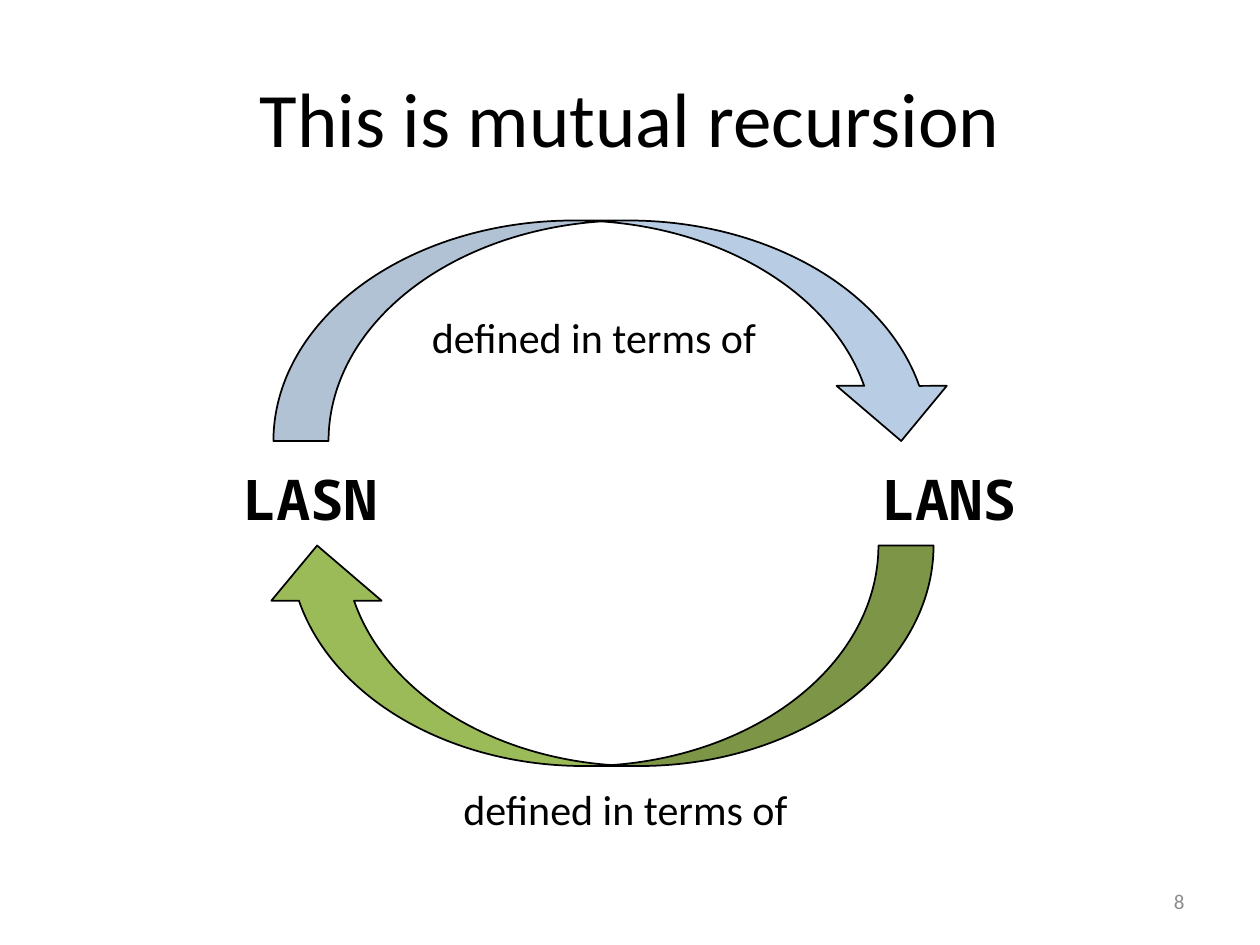
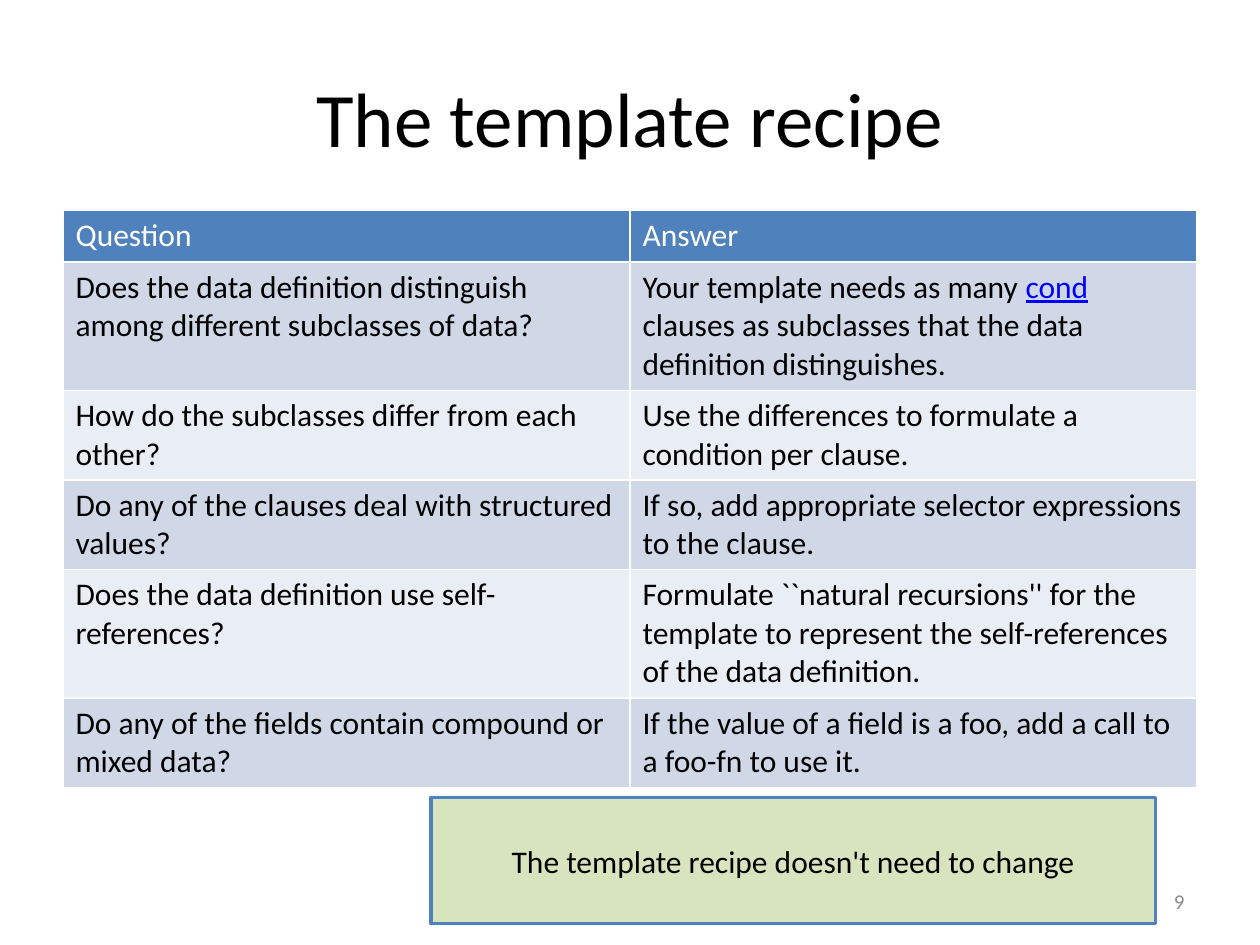
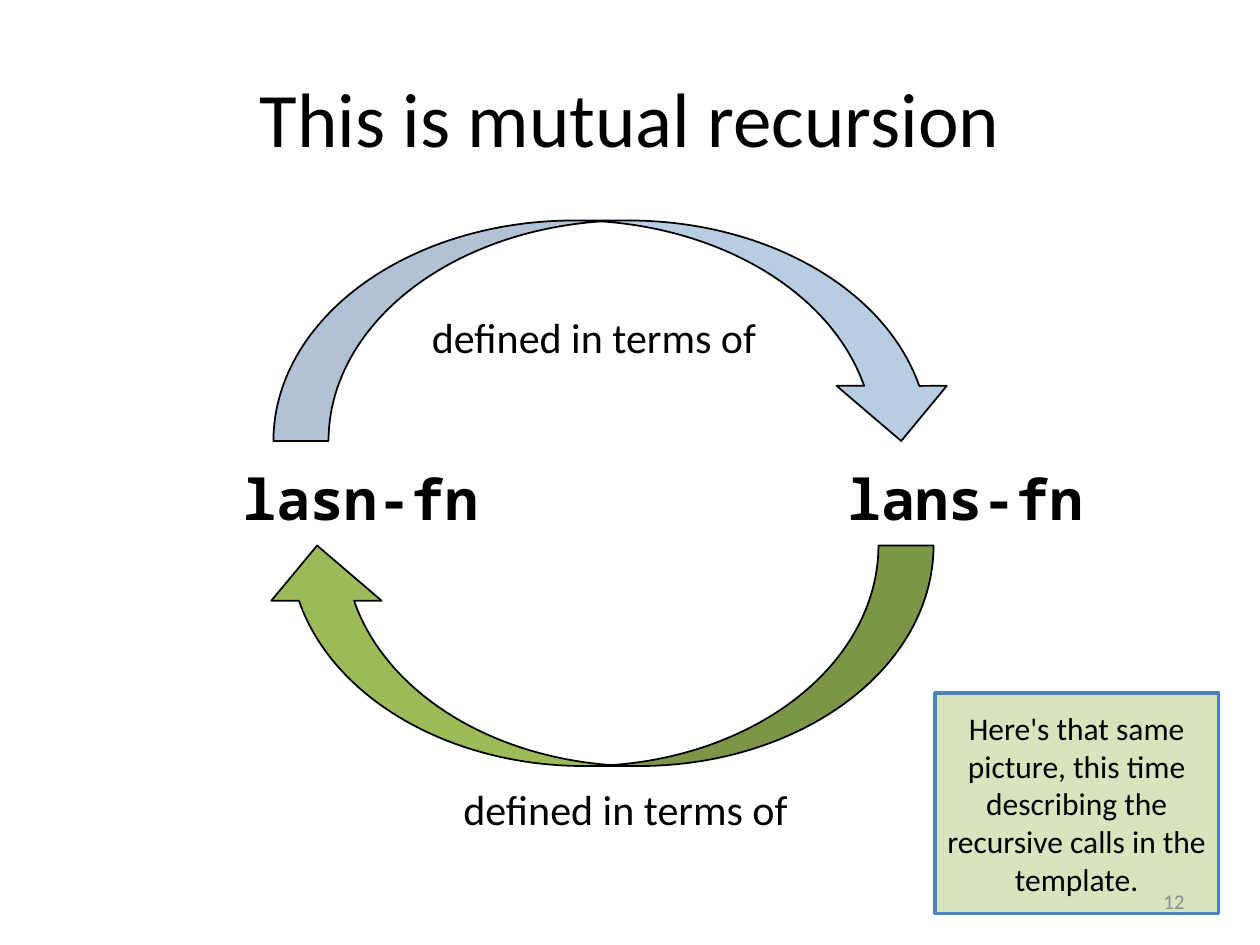
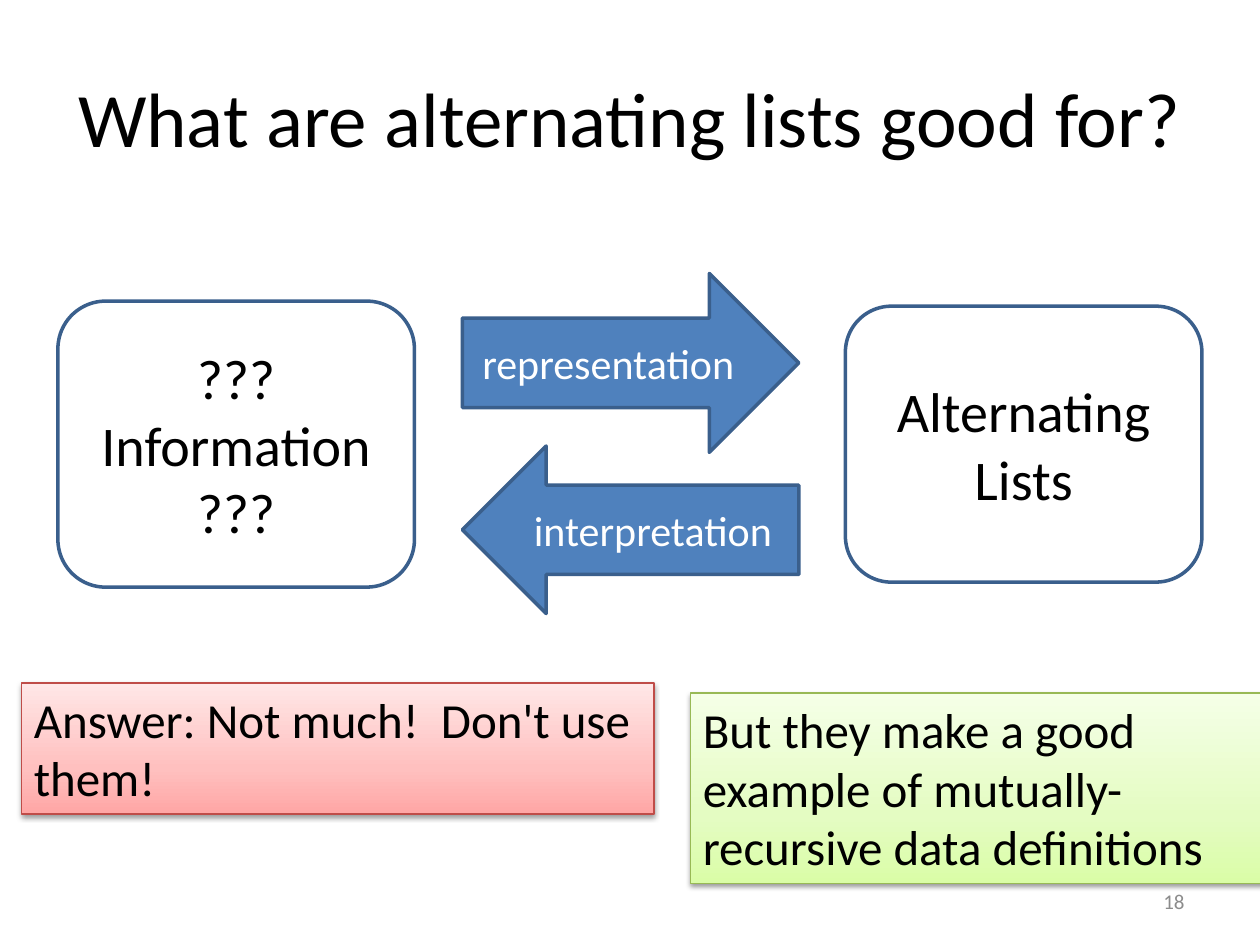
from copy import deepcopy

from lxml import etree
from pptx import Presentation
from pptx import util as u
from pptx.dml.color import RGBColor
from pptx.enum import shapes, text
from pptx.oxml.ns import qn

C = {
    "black": "000000", "white": "FFFFFF", "grey": "8C8C8C", "link": "0000FF",
    "blue": "4F81BD", "navy": "3A5F8C", "green": "9BBB59", "note": "D7E4BD",
    "band_dark": "D0D8E8", "band_light": "E9EDF4",
    "red_line": "BF4C48", "lime_line": "98B955",
}
REDS = [(0, "FFA6A5"), (0.35, "FFC0BF"), (1, "FFE7E7")]
LIMES = [(0, "DAFDA7"), (0.35, "E4FCC2"), (1, "F5FFE7")]

BODY = {"name": "Calibri", "size": u.Pt(18), "bold": False}
TITLE = {**BODY, "size": u.Pt(44)}
NUMBER = {**BODY, "size": u.Pt(12)}
LABEL = {**BODY, "size": u.Pt(24)}
ANSWER = {**BODY, "size": u.Pt(28)}
BOX = {**BODY, "size": u.Pt(32)}
CODE = {"name": "Noto Sans Mono", "size": u.Pt(32), "bold": True}
LINK = {**BODY, "underline": True}

MSO = shapes.MSO_SHAPE
AL = text.PP_ALIGN
MIDDLE = {"vertical_anchor": text.MSO_ANCHOR.MIDDLE, "word_wrap": True}
TOP = {"vertical_anchor": text.MSO_ANCHOR.TOP, "word_wrap": True}
GROW = {**TOP, "auto_size": text.MSO_AUTO_SIZE.SHAPE_TO_FIT_TEXT}

TITLE_BOX = (0.5, 0.3, 9, 1.25)
NUMBER_BOX = (7.17, 6.95, 2.33, 0.4)

RECIPE = [
    ("Question", "Answer", 0.41),
    ("Does the data definition distinguish among different subclasses of data?",
     "Your template needs as many |cond| clauses as subclasses that the data "
     "definition distinguishes.", 1.02),
    ("How do the subclasses differ from each other?",
     "Use the differences to formulate a condition per clause.", 0.71),
    ("Do any of the clauses deal with structured values?",
     "If so, add appropriate selector expressions to the clause.", 0.71),
    ("Does the data definition use self-references?",
     "Formulate ``natural recursions'' for the template to represent the "
     "self-references of the data definition.", 1.02),
    ("Do any of the fields contain compound or mixed data?",
     "If the value of a field is a foo, add a call to a foo-fn to use it.", 0.71),
]


def rgb(name):
    return RGBColor.from_string(C[name])


def inches(box):
    return [u.Inches(v) for v in box]


def set_all(obj, fmt):
    for key, value in fmt.items():
        setattr(obj, key, value)


def add_run(p, words, font, color):
    r = p.add_run()
    r.text = words
    set_all(r.font, font)
    r.font.color.rgb = rgb(color)


def write(sp, words, font, color="black", align=AL.LEFT, frame=MIDDLE):
    tf = sp.text_frame
    set_all(tf, frame)
    for i, line in enumerate(words.split("\n")):
        p = tf.add_paragraph() if i else tf.paragraphs[0]
        p.alignment = align
        add_run(p, line, font, color)


def add_text(s, box, words, font, **kw):
    write(s.shapes.add_textbox(*inches(box)), words, font, **kw)


def add_shape(s, kind, box, fill=None, line="navy", width=2):
    sp = s.shapes.add_shape(kind, *inches(box))
    sp.shadow.inherit = False
    if fill:
        sp.fill.solid()
        sp.fill.fore_color.rgb = rgb(fill)
    else:
        sp.fill.background()
    sp.line.color.rgb = rgb(line)
    sp.line.width = u.Pt(width)
    return sp


def add_note(s, box, words):
    sp = add_shape(s, MSO.RECTANGLE, box, "note", "blue")
    write(sp, words, BODY, align=AL.CENTER)


def add_slide(prs, title, number):
    s = prs.slides.add_slide(prs.slide_layouts[6])
    add_text(s, TITLE_BOX, title, TITLE, align=AL.CENTER)
    add_text(s, NUMBER_BOX, str(number), NUMBER, color="grey", align=AL.RIGHT)
    return s


def add_cycle(s, box, left_name, right_name, right_x):
    x, y, w, h = box
    arrow_h = 1.75
    over = add_shape(s, MSO.CURVED_DOWN_ARROW, (x + 0.09, y, 5.42, arrow_h),
                     "blue", "black", 1)
    color = over.fill._xPr.find(qn("a:solidFill"))[0]
    etree.SubElement(color, qn("a:alpha"), val="40000")
    under = add_shape(s, MSO.CURVED_DOWN_ARROW,
                      (x, y + h - arrow_h, 5.33, arrow_h), "green", "black", 1)
    for flip in ("flipH", "flipV"):
        under._element.spPr.xfrm.set(flip, "1")
    for dx, dy in ((1.25, 0.67), (1.5, 4.42)):
        add_text(s, (x + dx, y + dy, 3, 0.5), "defined in terms of", LABEL, frame=GROW)
    for name, name_x in ((left_name, x - 0.25), (right_name, right_x)):
        add_text(s, (name_x, y + 1.9, 2.2, 0.6), name, CODE)


def add_recipe(s, box):
    table = s.shapes.add_table(len(RECIPE), 2, *inches(box)).table
    for i, (question, answer, height) in enumerate(RECIPE):
        table.rows[i].height = u.Inches(height)
        band = "band_dark" if i % 2 else "band_light"
        for cell, words in zip(table.rows[i].cells, (question, answer)):
            cell.fill.solid()
            cell.fill.fore_color.rgb = rgb(band if i else "blue")
            p = cell.text_frame.paragraphs[0]
            for j, part in enumerate(words.split("|")):
                if j % 2:
                    add_run(p, part, LINK, "link")
                else:
                    add_run(p, part, BODY, "black" if i else "white")


def add_exchange(s, box):
    x, y, w, h = box
    box_w, arrow_x = 2.83, x + 3.21
    parts = [
        (MSO.ROUNDED_RECTANGLE, (x, y + 0.22, box_w, 2.27), None,
         "???\nInformation\n???", BOX, "black"),
        (MSO.ROUNDED_RECTANGLE, (x + w - box_w, y + 0.26, box_w, 2.19), None,
         "Alternating Lists", BOX, "black"),
        (MSO.RIGHT_ARROW, (arrow_x, y, 2.67, 1.42), "blue",
         "representation", LABEL, "white"),
        (MSO.LEFT_ARROW, (arrow_x, y + h - 1.33, 2.67, 1.33), "blue",
         "interpretation", LABEL, "white"),
    ]
    for kind, place, fill, words, font, color in parts:
        sp = add_shape(s, kind, place, fill)
        write(sp, words, font, color, AL.CENTER)
    sp.adjustments[0] = 0.533


def add_answer(s, box, words, stops, line):
    sp = add_shape(s, MSO.RECTANGLE, box, line=line, width=0.75)
    sp.fill.gradient()
    sp.fill.gradient_angle = 90
    first = sp.fill._xPr.find(qn("a:gradFill")).find(qn("a:gsLst"))[0]
    first.addnext(deepcopy(first))
    for stop, (position, color) in zip(sp.fill.gradient_stops, stops):
        stop.position = position
        stop.color.rgb = RGBColor.from_string(color)
    effects = sp._element.spPr.find(qn("a:effectLst"))
    shadow = etree.SubElement(effects, qn("a:outerShdw"), blurRad=str(u.Pt(3.1)),
                              dist=str(u.Pt(1.6)), dir="5400000", rotWithShape="0")
    color = etree.SubElement(shadow, qn("a:srgbClr"), val=C["black"])
    etree.SubElement(color, qn("a:alpha"), val="38000")
    write(sp, words, ANSWER, frame=GROW)


def main():
    prs = Presentation()
    prs.slide_width, prs.slide_height = inches((10, 7.5))
    cycle_box = (2.08, 1.75, 5.5, 4.33)

    s = add_slide(prs, "This is mutual recursion", 8)
    add_cycle(s, cycle_box, "LASN", "LANS", 6.9)

    s = add_slide(prs, "The template recipe", 9)
    add_recipe(s, (0.5, 1.67, 9, 4.58))
    add_note(s, (3.42, 6.33, 5.75, 1), "The template recipe doesn't need to change")

    s = add_slide(prs, "This is mutual recursion", 12)
    add_cycle(s, cycle_box, "lasn-fn", "lans-fn", 6.63)
    add_note(s, (7.42, 5.5, 2.25, 1.75),
             "Here's that same picture, this time describing the recursive calls "
             "in the template.")
    number = s.shapes[1]._element
    s.shapes[-1]._element.addnext(number)

    s = add_slide(prs, "What are alternating lists good for?", 18)
    add_exchange(s, (0.46, 2.17, 9.08, 2.7))
    add_answer(s, (0.17, 5.42, 5.02, 1.04), "Answer: Not much!  Don't use them!",
               REDS, "red_line")
    add_answer(s, (5.48, 5.5, 4.54, 1.51),
               "But they make a good example of mutually-recursive data definitions",
               LIMES, "lime_line")

    prs.save("out.pptx")


if __name__ == "__main__":
    main()
